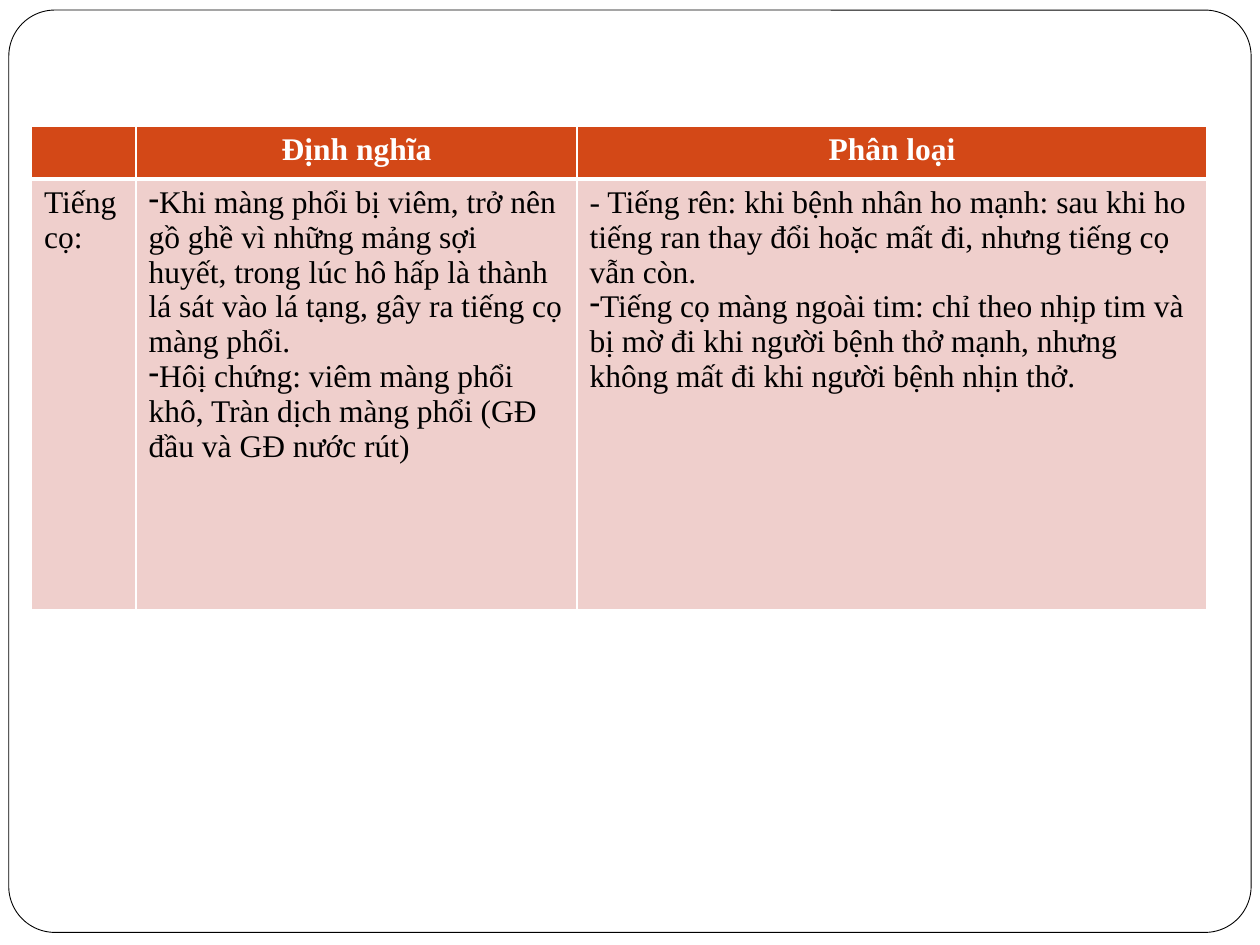
import pptx
import pptx.util
import pptx.dml.color
import pptx.enum.shapes
import pptx.enum.text
from lxml import etree

# Content: (bullet, text) for each paragraph of a cell
HEADERS = [[], [("", "Định nghĩa")], [("", "Phân loại")]]
FRICTION_RUB = [
    [("", "Tiếng cọ:")],
    [
        ("-", "Khi màng phổi bị viêm, trở nên gồ ghề vì những mảng sợi"),
        ("", "huyết, trong lúc hô hấp là thành lá sát vào lá tạng, gây ra tiếng cọ màng phổi."),
        ("-", "Hôị chứng: viêm màng phổi khô, Tràn dịch màng phổi (GĐ đầu và GĐ nước rút)"),
    ],
    [
        ("", "- Tiếng rên: khi bệnh nhân ho mạnh: sau khi ho tiếng ran thay đổi "
             "hoặc mất đi, nhưng tiếng cọ vẫn còn."),
        ("-", "Tiếng cọ màng ngoài tim: chỉ theo nhịp tim và bị mờ đi khi người bệnh "
              "thở mạnh, nhưng không mất đi khi người bệnh nhịn thở."),
    ],
]
ROWS = [HEADERS, FRICTION_RUB]

THEME = {
    "font": "Times New Roman", "size": 18,
    "paper": "FFFFFF", "ink": "000000", "header": "D34817", "body": "EFCFCC",
}

# Layout in inches
SLIDE = (10, 7.5)
FRAME = (0.07, 0.08, 9.86, 7.32)
TABLE_LEFT, TABLE_TOP = 0.25, 1
COLUMNS = [0.83, 3.5, 5]
ROW_HEIGHTS = [0.42, 3.42]
inches = pptx.util.Inches


def colour(name):
    return pptx.dml.color.RGBColor.from_string(THEME[name])


def add_borders(cell, widths):
    """Draw the left, right, top and bottom rules, with widths in points."""
    properties = cell._tc.get_or_add_tcPr()
    for side, width in zip("LRTB", widths):
        rule = etree.SubElement(properties, pptx.oxml.ns.qn("a:ln" + side),
                                w=str(pptx.util.Pt(width)))
        fill = etree.SubElement(rule, pptx.oxml.ns.qn("a:solidFill"))
        etree.SubElement(fill, pptx.oxml.ns.qn("a:srgbClr"), val=THEME["paper"])


def write_cell(cell, paragraphs, is_header):
    frame = cell.text_frame
    for index, (bullet, text) in enumerate(paragraphs):
        para = frame.add_paragraph() if index else frame.paragraphs[0]
        para.text = text
        if bullet:
            etree.SubElement(para._p.get_or_add_pPr(),
                             pptx.oxml.ns.qn("a:buChar"), char=bullet)
        if is_header:
            para.alignment = pptx.enum.text.PP_ALIGN.CENTER
        para.font.name = THEME["font"]
        para.font.size = pptx.util.Pt(THEME["size"])
        para.font.bold = is_header
        para.font.color.rgb = colour("paper" if is_header else "ink")


def main():
    deck = pptx.Presentation()
    deck.slide_width, deck.slide_height = map(inches, SLIDE)
    page = deck.slides.add_slide(deck.slide_layouts[6])

    # Rounded frame around the page
    frame = page.shapes.add_shape(pptx.enum.shapes.MSO_SHAPE.ROUNDED_RECTANGLE,
                                  *map(inches, FRAME))
    frame.adjustments[0] = 0.05
    frame.shadow.inherit = False
    frame.fill.solid()
    frame.fill.fore_color.rgb = colour("paper")
    frame.line.color.rgb = colour("ink")
    frame.line.width = pptx.util.Pt(0.5)

    # Table of definitions and kinds
    table = page.shapes.add_table(
        len(ROWS), len(COLUMNS), inches(TABLE_LEFT), inches(TABLE_TOP),
        inches(sum(COLUMNS)), inches(sum(ROW_HEIGHTS))).table
    table.horz_banding = False
    for column, width in zip(table.columns, COLUMNS):
        column.width = inches(width)
    for number, (row, height) in enumerate(zip(table.rows, ROW_HEIGHTS)):
        row.height = inches(height)
        is_header = number == 0
        for cell, paragraphs in zip(row.cells, ROWS[number]):
            add_borders(cell, (1, 1, 1, 3) if is_header else (1, 1, 3, 1))
            cell.fill.solid()
            cell.fill.fore_color.rgb = colour("header" if is_header else "body")
            write_cell(cell, paragraphs, is_header)

    deck.save("out.pptx")


if __name__ == "__main__":
    main()
